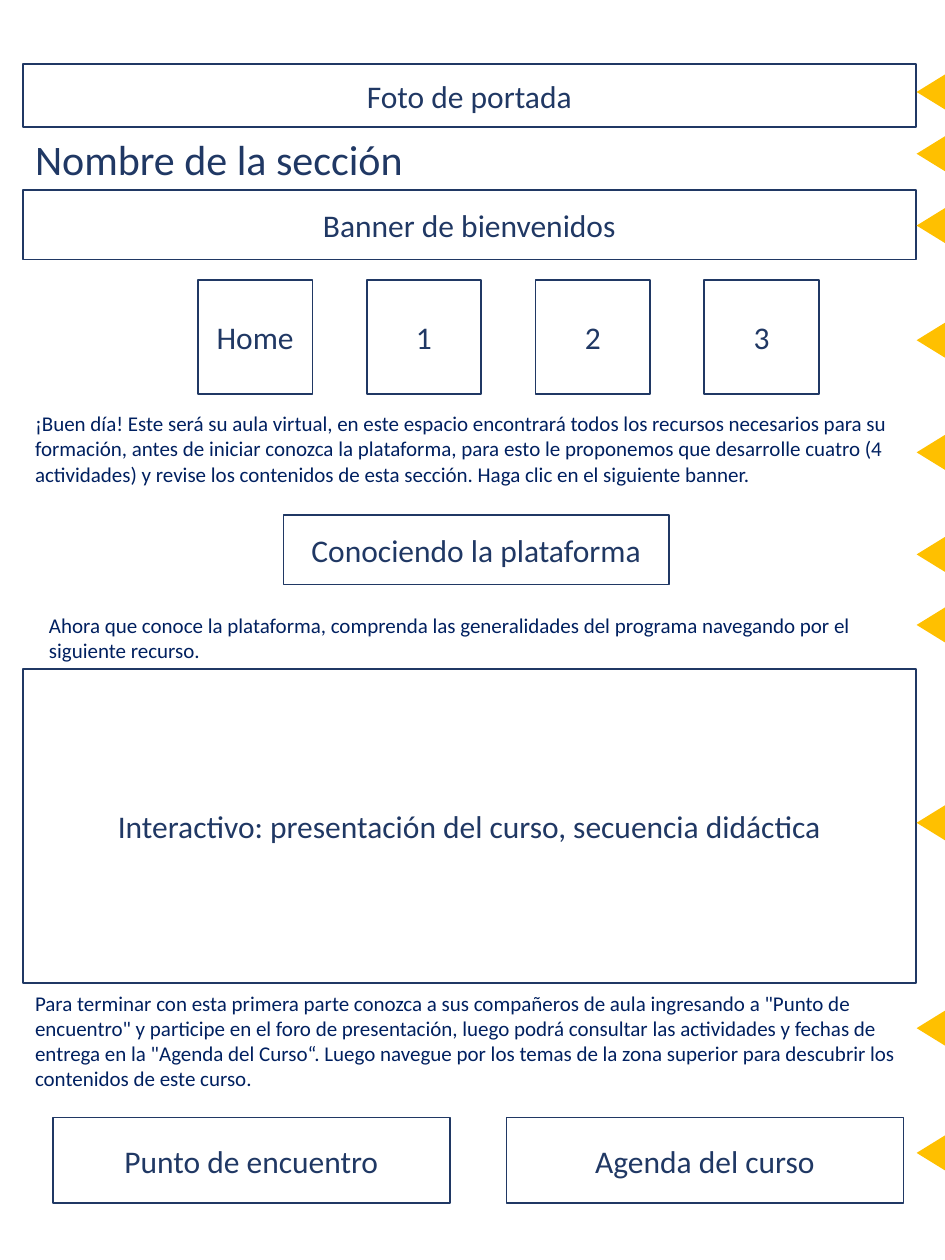
from pptx import Presentation
from pptx.dml.color import RGBColor
from pptx.enum.shapes import MSO_SHAPE as Shape
from pptx.enum.text import MSO_ANCHOR as Anchor, MSO_AUTO_SIZE as AutoSize, PP_ALIGN as Align
from pptx.util import Emu, Pt

PX = 9144  # EMU in one px, at 100 px to the inch
NAVY, DARK_BLUE, AMBER = "203864", "002060", "FFC000"
LEFT, WIDTH = 18, 709

GREETING = (
    "¡Buen día! Este será su aula virtual, en este espacio encontrará todos los recursos "
    "necesarios para su formación, antes de iniciar conozca la plataforma, para esto le "
    "proponemos que desarrolle cuatro (4 actividades) y revise los contenidos de esta "
    "sección. Haga clic en el siguiente banner. "
)
PROGRAM = (
    "Ahora que conoce la plataforma, comprenda las generalidades del programa navegando "
    "por el siguiente recurso."
)
CLOSING = (
    "Para terminar con esta primera parte conozca a sus compañeros de aula ingresando "
    'a "Punto de encuentro" y participe en el foro de presentación, luego podrá consultar '
    'las actividades y fechas de entrega en la "Agenda del Curso“. Luego navegue por los '
    "temas de la zona superior para descubrir los contenidos de este curso."
)


def px(*lengths):
    return [Emu(length * PX) for length in lengths]


def color(code):
    return RGBColor.from_string(code)


class Wireframe:
    """Style and current slide of the page layout."""

    font_name = "Calibri"

    def __init__(self, slide):
        self.shapes = slide.shapes

    def set_text(self, frame, text, size, ink, align=Align.LEFT):
        paragraph = frame.paragraphs[0]
        paragraph.text = text
        paragraph.alignment = align
        font = paragraph.font
        font.name, font.size = self.font_name, Pt(size)
        font.color.rgb = color(ink)

    def box(self, text, left, top, width, height):
        shape = self.shapes.add_shape(Shape.RECTANGLE, *px(left, top, width, height))
        shape.shadow.inherit = False
        shape.fill.background()
        shape.line.color.rgb = color(NAVY)
        shape.line.width = Pt(1)
        shape.text_frame.word_wrap = True
        shape.text_frame.vertical_anchor = Anchor.MIDDLE
        self.set_text(shape.text_frame, text, 18, NAVY, Align.CENTER)

    def text(self, text, left, top, width, height, size=12, ink=DARK_BLUE, wrap=True):
        frame = self.shapes.add_textbox(*px(left, top, width, height)).text_frame
        frame.word_wrap = wrap
        frame.auto_size = AutoSize.SHAPE_TO_FIT_TEXT
        self.set_text(frame, text, size, ink)

    def marker(self, top):
        """Triangle at the right edge that points left."""
        shape = self.shapes.add_shape(Shape.ISOSCELES_TRIANGLE, *px(724, top, 37, 30))
        shape.rotation = 270
        shape.shadow.inherit = False
        shape.fill.solid()
        shape.fill.fore_color.rgb = color(AMBER)
        shape.line.fill.background()


def main():
    presentation = Presentation()
    presentation.slide_width, presentation.slide_height = px(750, 1000)
    page = Wireframe(presentation.slides.add_slide(presentation.slide_layouts[6]))

    page.box("Foto de portada", LEFT, 51, WIDTH, 50)
    page.text("Nombre de la sección", LEFT, 101, 315, 50, size=24, ink=NAVY, wrap=False)
    page.box("Banner de bienvenidos", LEFT, 151, WIDTH, 55)
    for column, label in enumerate(["Home", "1", "2", "3"]):
        page.box(label, 157 + 134 * column, 222, 91, 91)

    page.text(GREETING, LEFT, 321, 719, 71)
    page.box("Conociendo la plataforma", 225, 409, 306, 55)
    page.text(PROGRAM, 29, 481, WIDTH, 50)
    page.box("Interactivo: presentación del curso, secuencia didáctica", LEFT, 531, WIDTH, 249)
    page.text(CLOSING, LEFT, 781, 714, 91)
    for column, label in enumerate(["Punto de encuentro", "Agenda del curso"]):
        page.box(label, 42 + 360 * column, 887, 315, 68)

    for top in (58, 107, 164, 255, 344, 425, 481, 638, 801, 900):
        page.marker(top)

    presentation.save("out.pptx")


if __name__ == "__main__":
    main()
